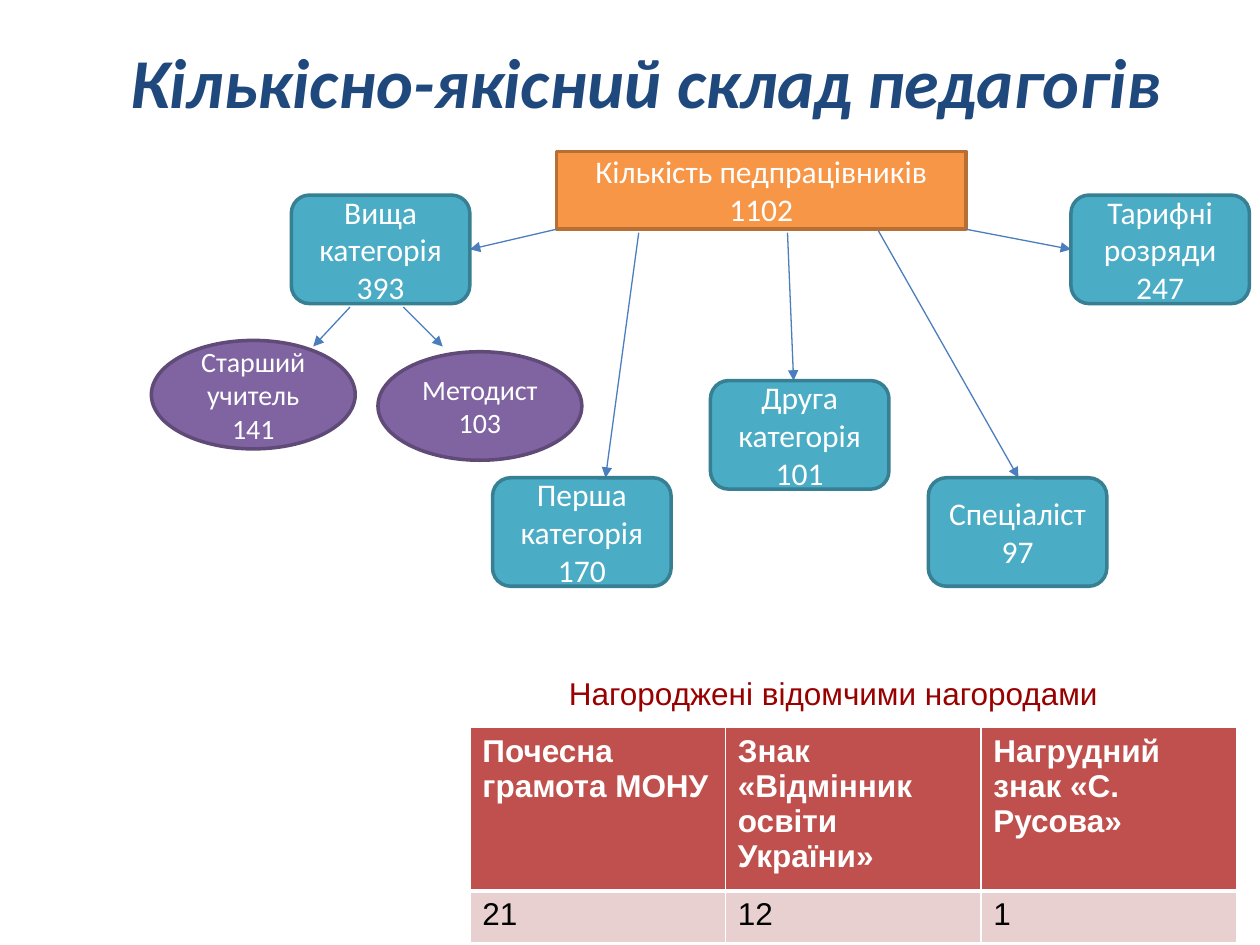
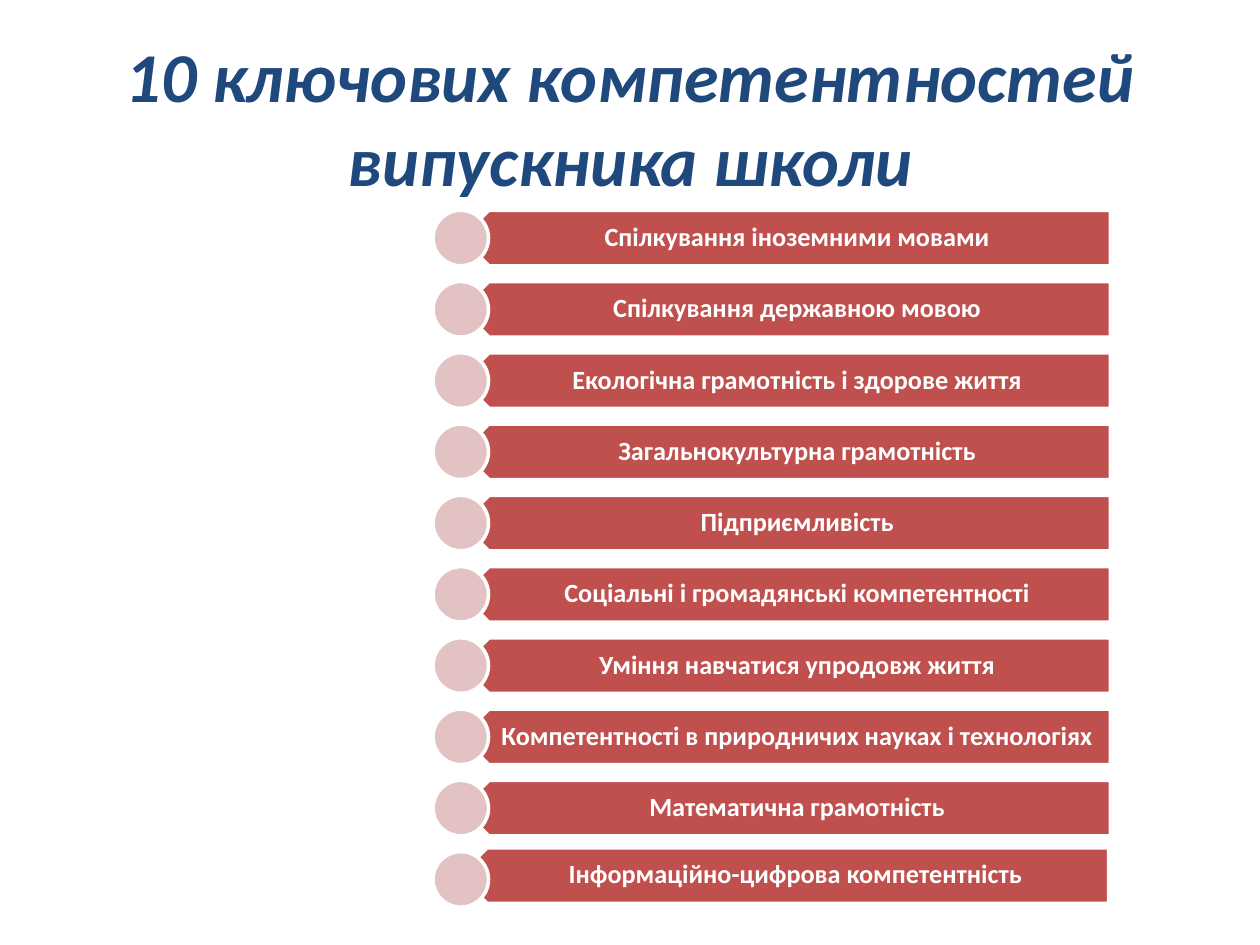
import dataclasses

import pptx
import pptx.dml.color
import pptx.enum.shapes
import pptx.enum.text
import pptx.oxml
import pptx.oxml.ns
import pptx.util

Pt = pptx.util.Pt
Shape = pptx.enum.shapes.MSO_SHAPE
Align = pptx.enum.text.PP_ALIGN
Anchor = pptx.enum.text.MSO_ANCHOR


@dataclasses.dataclass(frozen=True)
class Theme:
    head: str = "Calibri"
    body: str = "Arial"
    navy: str = "1F497D"
    white: str = "FFFFFF"
    black: str = "000000"
    wine: str = "990000"
    red: str = "C0504D"
    pink: str = "E8D0D0"
    rose: str = "E2C2C2"
    link: str = "4B7EBC"
    root: tuple = ("F79646", "B76F34")
    rank: tuple = ("4BACC6", "377F92")
    post: tuple = ("8064A2", "5F4A78")
    big: float = 40
    mid: float = 18
    small: float = 16
    item: float = 15
    edge: float = 2
    thin: float = 0.75


def color(code):
    return pptx.dml.color.RGBColor.from_string(code)


def element(tag, inner=""):
    return pptx.oxml.parse_xml(
        f'<a:{tag} {pptx.oxml.ns.nsdecls("a")}>{inner}</a:{tag.split()[0]}>')


class Deck:
    def __init__(self, theme):
        self.theme = theme
        self.prs = pptx.Presentation()
        self.prs.slide_width, self.prs.slide_height = Pt(720), Pt(540)
        self.slide = None

    def page(self, title, box):
        self.slide = self.prs.slides.add_slide(self.prs.slide_layouts[6])
        t = self.theme
        self.text(box, title, t.head, t.big, t.navy, bold=True, italic=True)

    def style(self, frame, lines, font, size, ink, bold=False, italic=False,
              align=Align.CENTER):
        """Set the words of a frame and format them."""
        frame.text = lines
        for para in frame.paragraphs:
            para.alignment = align
            for run in para.runs:
                face = run.font
                face.name, face.size = font, Pt(size)
                face.bold, face.italic = bold, italic
                face.color.rgb = color(ink)

    def text(self, box, lines, *look, wrap=True, anchor=Anchor.MIDDLE, **more):
        frame = self.slide.shapes.add_textbox(*map(Pt, box)).text_frame
        frame.word_wrap = wrap
        frame.vertical_anchor = anchor
        self.style(frame, lines, *look, **more)
        return frame

    def shape(self, kind, box, fill, line):
        shape = self.slide.shapes.add_shape(kind, *map(Pt, box))
        shape.shadow.inherit = False
        shape.fill.solid()
        shape.fill.fore_color.rgb = color(fill)
        shape.line.color.rgb = color(line)
        shape.line.width = Pt(self.theme.edge)
        return shape

    def node(self, kind, box, paint, lines, size):
        frame = self.shape(kind, box, *paint).text_frame
        frame.word_wrap = True
        frame.vertical_anchor = Anchor.MIDDLE
        self.style(frame, lines, self.theme.head, size, self.theme.white)

    def arrow(self, *ends):
        line = self.slide.shapes.add_connector(
            pptx.enum.shapes.MSO_CONNECTOR.STRAIGHT, *map(Pt, ends))
        line.line.color.rgb = color(self.theme.link)
        line.line.width = Pt(self.theme.thin)
        props = line._element.spPr
        props.find(pptx.oxml.ns.qn("a:ln")).append(
            element('tailEnd type="triangle"'))
        props.append(element("effectLst"))

    def cell(self, cell, words, fill, ink, bold, edges):
        """Fill one cell; edges are left, right, top and bottom widths."""
        t = self.theme
        props = cell._tc.get_or_add_tcPr()
        paint = f'<a:solidFill><a:srgbClr val="{t.white}"/></a:solidFill>'
        for side, width in zip("LRTB", edges):
            props.append(element(f'ln{side} w="{Pt(width)}"', paint))
        cell.fill.solid()
        cell.fill.fore_color.rgb = color(fill)
        self.style(cell.text_frame, words, t.body, t.mid, ink, bold,
                   align=Align.LEFT)

    def table(self, box, heights, rows):
        """Draw a table whose first row is the header."""
        t = self.theme
        grid = self.slide.shapes.add_table(
            len(rows), len(rows[0]), *map(Pt, box)).table
        looks = [(t.red, t.white, True, (1, 1, 1, 3)),
                 (t.pink, t.black, False, (1, 1, 3, 1))]
        for r, row in enumerate(rows):
            grid.rows[r].height = Pt(heights[r])
            for c, words in enumerate(row):
                self.cell(grid.cell(r, c), words, *looks[min(r, 1)])

    def bar(self, left, top, words, dot):
        """Draw a pointed bar with its words, and a dot at its tip."""
        t = self.theme
        high = 31.7
        plate = self.shape(Shape.PENTAGON, (left, top, 371, high), t.red, t.white)
        plate.rotation = 180
        frame = self.text((left + 8, top, 363, high), words, t.head, t.item,
                          t.white, bold=True)
        frame.margin_left, frame.margin_right = Pt(13.7), Pt(8.6)
        frame.margin_top = frame.margin_bottom = Pt(4.3)
        frame.paragraphs[0].line_spacing = 0.9
        self.shape(Shape.OVAL, (*dot, high, high), t.rose, t.white)


def staff(deck):
    t = deck.theme
    deck.page("Кількісно-якісний склад педагогів", (30, 1, 678, 90))
    deck.node(Shape.RECTANGLE, (318, 86.5, 234, 44.5), t.root,
              "Кількість педпрацівників\n1102", t.mid)
    for ends in [(318, 131, 268.5, 142.5), (365, 133, 346, 273),
                 (450, 133, 453.5, 217.5), (502, 132, 582, 273),
                 (552, 131, 612, 142.5), (200, 175.5, 179, 198),
                 (230.5, 175.5, 253, 198)]:
        deck.arrow(*ends)
    for left, top, words in [(166.5, 111.5, "Вища категорія\n393"),
                             (281.5, 273, "Перша категорія\n170"),
                             (406, 217.5, "Друга категорія\n101"),
                             (530.5, 273, "Спеціаліст\n97"),
                             (612, 111.5, "Тарифні розряди\n247")]:
        deck.node(Shape.ROUNDED_RECTANGLE, (left, top, 102, 62), t.rank,
                  words, t.mid)
    for left, top, words in [(86.5, 194.5, "Старший учитель\n141"),
                             (216, 201, "Методист 103")]:
        deck.node(Shape.OVAL, (left, top, 116.5, 62), t.post, words, t.small)
    deck.table((268.5, 415.5, 438, 116.5), (87, 29.5), [
        ("Почесна грамота МОНУ", "Знак «Відмінник освіти України»",
         "Нагрудний знак «С. Русова»"),
        ("21", "12", "1")])
    deck.text((318, 381.5, 320, 29), "Нагороджені відомчими нагородами",
              t.body, t.mid, t.wine, wrap=False, anchor=Anchor.TOP,
              align=Align.LEFT)


def skills(deck):
    deck.page("10 ключових компетентностей випускника школи",
              (36, 21.6, 648, 90))
    names = ["Спілкування іноземними мовами",
             "Спілкування державною мовою",
             "Екологічна грамотність і здорове життя",
             "Загальнокультурна грамотність",
             "Підприємливість",
             "Соціальні і громадянські компетентності",
             "Уміння навчатися упродовж життя",
             "Компетентності в природничих науках і технологіях",
             "Математична грамотність",
             "Інформаційно-цифрова компетентність"]
    for n, name in enumerate(names):
        top = 120.2 + 40.72 * n
        last = n == len(names) - 1
        # the last bar sits a little higher and further left than its dot
        deck.bar(263.5 - last, top - 2.2 * last, name, (247.5, top))


def main():
    deck = Deck(Theme())
    staff(deck)
    skills(deck)
    deck.prs.save("out.pptx")


if __name__ == "__main__":
    main()
